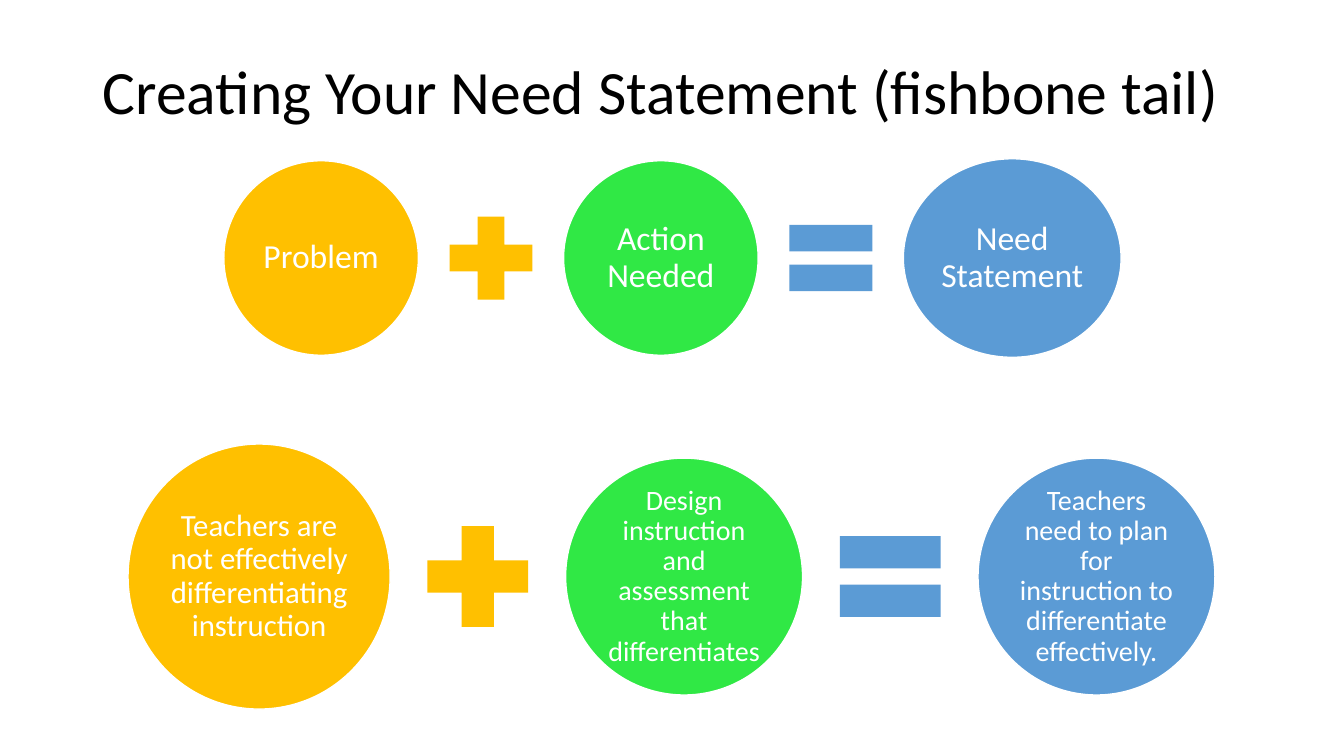
from pptx import Presentation
from pptx.dml.color import RGBColor
from pptx.enum.shapes import MSO_SHAPE as SHAPE
from pptx.enum.text import MSO_ANCHOR as ANCHOR, PP_ALIGN as ALIGN
from pptx.util import Inches, Pt

FONT = "Calibri"
BLACK = RGBColor(0x00, 0x00, 0x00)
WHITE = RGBColor(0xFF, 0xFF, 0xFF)
AMBER = RGBColor(0xFF, 0xC0, 0x00)
GREEN = RGBColor(0x30, 0xE8, 0x45)
BLUE = RGBColor(0x5B, 0x9B, 0xD5)

TERM_COLORS = (AMBER, GREEN, BLUE)
OPERATORS = ((SHAPE.MATH_PLUS, AMBER), (SHAPE.MATH_EQUAL, BLUE))


def write(frame, text, size, color):
    frame.word_wrap = True
    frame.vertical_anchor = ANCHOR.MIDDLE
    paragraph = frame.paragraphs[0]
    paragraph.text = text
    paragraph.line_spacing = 0.9
    paragraph.font.name = FONT
    paragraph.font.size = Pt(size)
    paragraph.font.color.rgb = color
    return paragraph


def add_title(slide, text):
    title = slide.shapes.add_textbox(Inches(0.92), Inches(0.21), Inches(11.5), Inches(1.45))
    write(title.text_frame, text, 44, BLACK)


def add_filled(group, kind, left, middle, width, height, color):
    shape = group.shapes.add_shape(
        kind, Inches(left), Inches(middle - height / 2), Inches(width), Inches(height))
    shape.shadow.inherit = False
    shape.fill.solid()
    shape.fill.fore_color.rgb = color
    shape.line.fill.background()
    return shape


def add_term(group, left, middle, width, height, color, text, size):
    circle = add_filled(group, SHAPE.OVAL, left, middle, width, height, color)
    circle.line.color.rgb = WHITE
    circle.line.width = Pt(1)
    frame = circle.text_frame
    frame.margin_left = frame.margin_right = Inches(0.03)
    frame.margin_top = frame.margin_bottom = Inches(0.03)
    write(frame, text, size, WHITE).alignment = ALIGN.CENTER


def add_equation(slide, left, middle, gap, operator_size, terms):
    group = slide.shapes.add_group_shape()
    for index, (text, size, width, height) in enumerate(terms):
        if index:
            operator, color = OPERATORS[index - 1]
            add_filled(group, operator, left, middle, operator_size, operator_size, color)
            left += operator_size + gap
        add_term(group, left, middle, width, height, TERM_COLORS[index], text, size)
        left += width + gap


def main():
    deck = Presentation()
    deck.slide_width = Inches(13.33)
    deck.slide_height = Inches(7.5)
    slide = deck.slides.add_slide(deck.slide_layouts[6])

    add_title(slide, "Creating Your Need Statement (fishbone tail)")
    add_equation(slide, 2.22, 2.56, 0.16, 1.12, (
        ("Problem", 24, 1.93, 1.93),
        ("Action Needed", 24, 1.93, 1.93),
        ("Need Statement", 24, 2.16, 1.97),
    ))
    add_equation(slide, 1.27, 5.72, 0.19, 1.36, (
        ("Teachers are not effectively differentiating instruction", 22, 2.6, 2.63),
        ("Design instruction and assessment that differentiates", 20, 2.35, 2.35),
        ("Teachers need to plan for instruction to differentiate effectively.", 20, 2.35, 2.35),
    ))
    deck.save("out.pptx")


if __name__ == "__main__":
    main()
